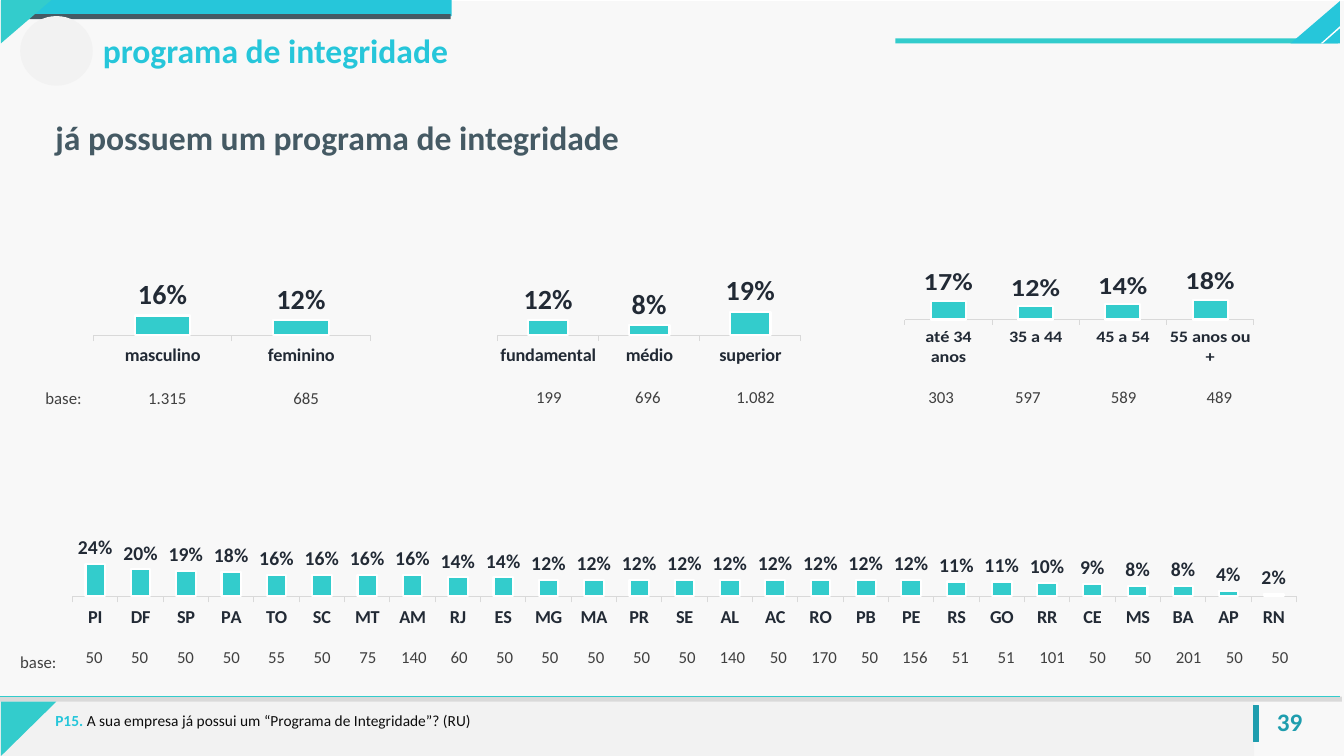
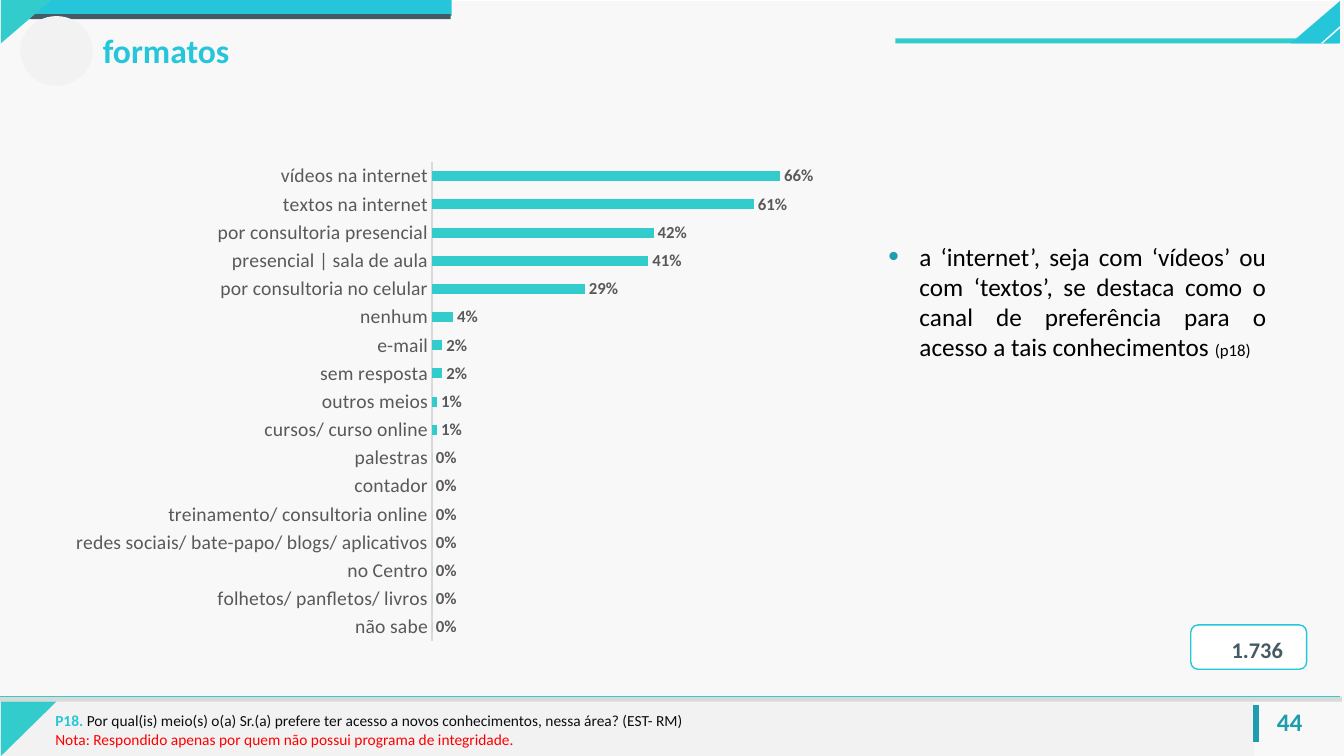
from pptx import Presentation
from pptx.chart.data import CategoryChartData
from pptx.dml.color import RGBColor
from pptx.enum.chart import XL_CHART_TYPE as ChartType, XL_LABEL_POSITION as LabelAt, XL_TICK_MARK as Tick
from pptx.enum.dml import MSO_PATTERN as Pattern
from pptx.enum.shapes import MSO_CONNECTOR as Connector, MSO_SHAPE as Shape
from pptx.enum.text import MSO_ANCHOR as Anchor, MSO_AUTO_SIZE as AutoSize, PP_ALIGN as Align
from pptx.oxml import parse_xml
from pptx.oxml.ns import nsdecls, qn
from pptx.util import Pt
from lxml import etree

EMU_PER_PX = 9144
FONT = "Calibri"
NO_GRID_STYLE = "{2D5ABB26-0587-4C30-8999-92F81FD0307C}"

CYAN = RGBColor(0x26, 0xC6, 0xDA)
TURQUOISE = RGBColor(0x33, 0xCC, 0xCC)
TEAL = RGBColor(0x1E, 0x9D, 0xAE)
SLATE = RGBColor(0x45, 0x5A, 0x64)
NAVY = RGBColor(0x22, 0x2A, 0x35)
INK = RGBColor(0x0D, 0x0D, 0x0D)
BLACK = RGBColor(0, 0, 0)
GRAPHITE = RGBColor(0x40, 0x40, 0x40)
GREY = RGBColor(0x59, 0x59, 0x59)
SILVER = RGBColor(0xD9, 0xD9, 0xD9)
PALE = RGBColor(0xF2, 0xF2, 0xF2)
PAPER = RGBColor(0xF8, 0xF8, 0xF8)
WHITE = RGBColor(0xFF, 0xFF, 0xFF)
RED = RGBColor(0xFF, 0, 0)


def px(length):
    return length * EMU_PER_PX


def box(*lengths):
    return [px(length) for length in lengths]


def style(size, color, bold=False):
    return {"size": Pt(size), "bold": bold, "name": FONT, "color": color}


HEADING = style(24, CYAN, True)
SUBHEADING = style(24, SLATE, True)
PAGE_NUMBER = style(18, TEAL, True)
QUESTION_CODE = style(11, CYAN, True)
QUESTION = style(11, INK)
NOTE = style(11, RED)
BASE = style(12, GRAPHITE)
BADGE = style(16, SLATE, True)


def apply(target, values):
    for name, value in values.items():
        if name == "color":
            target.color.rgb = value
        else:
            setattr(target, name, value)


def write(frame, paragraphs, **layout):
    for index, runs in enumerate(paragraphs):
        paragraph = frame.add_paragraph() if index else frame.paragraphs[0]
        apply(paragraph, layout)
        for text, run_style in runs:
            run = paragraph.add_run()
            run.text = text
            apply(run.font, run_style)


def paint(shape, fill, line=None, width=1):
    shape.shadow.inherit = False
    shape.fill.solid()
    shape.fill.fore_color.rgb = fill
    if line is None:
        shape.line.fill.background()
    else:
        apply(shape.line, {"color": line, "width": Pt(width)})
    return shape


def add_block(slide, kind, place, fill, line=None, width=1):
    return paint(slide.shapes.add_shape(kind, *box(*place)), fill, line, width)


def add_outline(slide, points, fill):
    builder = slide.shapes.build_freeform(*points[0], scale=EMU_PER_PX)
    builder.add_line_segments(points[1:], close=True)
    paint(builder.convert_to_shape(), fill)


def add_text(slide, place, paragraphs, wrap=True, **layout):
    frame = slide.shapes.add_textbox(*box(*place)).text_frame
    frame.word_wrap = wrap
    write(frame, paragraphs, **layout)


def fill_placeholder(placeholder, place, paragraphs, **layout):
    apply(placeholder, dict(zip(("left", "top", "width", "height"), box(*place))))
    frame = placeholder.text_frame
    apply(frame, {"auto_size": AutoSize.NONE, "vertical_anchor": Anchor.TOP, "word_wrap": True})
    write(frame, paragraphs, **layout)
    return frame


def add_bullet(paragraph):
    properties = paragraph._p.get_or_add_pPr()
    properties.set("marL", str(px(31)))
    properties.set("indent", str(px(-31)))
    bullet_color = etree.SubElement(properties, qn("a:buClr"))
    etree.SubElement(bullet_color, qn("a:srgbClr"), val=str(TEAL))
    for tag, attributes in (("a:buSzPct", {"val": "120000"}),
                            ("a:buFont", {"typeface": "Arial"}),
                            ("a:buChar", {"char": "•"})):
        etree.SubElement(properties, qn(tag), attributes)


def draw_frame(slide):
    backdrop = add_block(slide, Shape.RECTANGLE, (0, 0, 1333, 750), PAPER)
    backdrop.fill.patterned()
    backdrop.fill.pattern = Pattern.DARK_HORIZONTAL
    backdrop.fill.fore_color.rgb = PAPER
    backdrop.fill.back_color.rgb = WHITE
    for place, fill in (((0, 696, 1244, 54), PALE),
                        ((9, 0, 439, 16), CYAN),
                        ((-1, 691, 1332, 5), SILVER),
                        ((23, 14, 424, 5), SLATE),
                        ((888, 38, 439, 5), TURQUOISE)):
        add_block(slide, Shape.RECTANGLE, place, fill)
    for points, fill in (([(1, 0), (51, 0), (1, 43)], TURQUOISE),
                         ([(1329, 1), (1280, 43), (1329, 43)], CYAN),
                         ([(1329, 28), (1329, 26), (1310, 43), (1312, 43)], WHITE),
                         ([(1, 696), (56, 696), (1, 750)], TURQUOISE)):
        add_outline(slide, points, fill)
    rule = slide.shapes.add_connector(Connector.STRAIGHT, *box(-4, 691, 1329, 691))
    apply(rule.line, {"color": TURQUOISE, "width": Pt(0.5)})
    etree.SubElement(rule.element.spPr, qn("a:effectLst"))
    add_block(slide, Shape.RECTANGLE, (1243, 700, 5, 36), TEAL, TEAL, 0.75)
    add_block(slide, Shape.OVAL, (20, 16, 72, 69), PALE)


def move_frame_to_master(slide, master):
    tree = master.placeholders[0].element.getparent()
    parts = [shape.element for shape in slide.shapes if not shape.is_placeholder]
    for index, part in enumerate(parts):
        part.xpath(".//p:cNvPr")[0].set("id", str(100 + index))
        tree.insert(2 + index, part)


def add_heading_and_footer(slide, heading, number, footer):
    fill_placeholder(slide.shapes.title, (92, 25, 583, 50), [[(heading, HEADING)]], alignment=Align.LEFT)
    add_text(slide, (1248, 696, 62, 40), [[(number, PAGE_NUMBER)]], wrap=False, alignment=Align.CENTER)
    add_text(slide, (45, 701, 1201, 49), footer)


def set_plot_area(chart, fractions):
    plot_area = chart.element.find(".//" + qn("c:plotArea"))
    for layout in plot_area.findall(qn("c:layout")):
        plot_area.remove(layout)
    sizes = "".join(f'<c:{tag} val="{value}"/>' for tag, value in zip("xywh", fractions))
    plot_area.insert(0, parse_xml(
        f'<c:layout {nsdecls("c")}><c:manualLayout><c:layoutTarget val="inner"/>'
        f'<c:xMode val="edge"/><c:yMode val="edge"/>{sizes}</c:manualLayout></c:layout>'))


def add_bars(slide, kind, place, percents, axis_style, label_style, top, gap):
    data = CategoryChartData(number_format="0%")
    data.categories = list(percents)
    data.add_series("Series 1", [percent / 100 for percent in percents.values()])
    chart = slide.shapes.add_chart(kind, *box(*place), data).chart
    apply(chart, {"has_legend": False, "has_title": False})
    apply(chart.font, {"size": Pt(10), "name": FONT})
    apply(chart.value_axis, {"visible": False, "has_major_gridlines": False,
                             "minimum_scale": 0, "maximum_scale": top})
    apply(chart.category_axis, {"major_tick_mark": Tick.OUTSIDE, "has_major_gridlines": False})
    apply(chart.category_axis.tick_labels.font, axis_style)
    apply(chart.category_axis.format.line, {"color": SILVER, "width": Pt(0.75)})
    plot = chart.plots[0]
    apply(plot, {"gap_width": gap, "vary_by_categories": False, "has_data_labels": True})
    apply(plot.data_labels, {"show_value": True, "number_format": "0%", "number_format_is_linked": False,
                             "position": LabelAt.OUTSIDE_END})
    apply(plot.data_labels.font, label_style)
    bars = plot.series[0].format
    bars.fill.solid()
    bars.fill.fore_color.rgb = TURQUOISE
    return chart


def add_columns(slide, place, percents, label_size=20, gap=150, plot_area=(0.036, 0.167, 0.928, 0.659)):
    chart = add_bars(slide, ChartType.COLUMN_CLUSTERED, place, percents, style(13, NAVY, True),
                     style(label_size, NAVY, True), 0.9, gap)
    apply(chart.plots[0].series[0].format.line, {"color": WHITE, "width": Pt(1.5)})
    set_plot_area(chart, plot_area)


def add_base_row(slide, left, top, widths, values, align=Align.CENTER, indents=None, tight=False):
    holder = slide.shapes.add_table(1, len(values), *box(left, top, sum(widths), 37))
    holder.element.find(".//" + qn("a:tableStyleId")).text = NO_GRID_STYLE
    table = holder.table
    apply(table, {"first_row": False, "horz_banding": False})
    for index, (width, value) in enumerate(zip(widths, values)):
        table.columns[index].width = px(width)
        cell = table.cell(0, index)
        cell.fill.background()
        is_label = value == "base:"
        if tight and not is_label:
            apply(cell, {"vertical_anchor": Anchor.MIDDLE, "margin_left": px(1), "margin_right": px(1),
                         "margin_top": px(1), "margin_bottom": 0})
        if indents and index in indents:
            cell.margin_left = px(indents[index])
        write(cell.text_frame, [[(value, BASE)]], alignment=Align.LEFT if is_label else align,
              line_spacing=1.0 if tight and not is_label else 1.5)


def share_width(total, count):
    edges = [round(total * index / count) for index in range(count + 1)]
    return [right - left for left, right in zip(edges, edges[1:])]


def fill_profile_slide(slide):
    add_heading_and_footer(slide, "programa de integridade", "39", [
        [("P15. ", QUESTION_CODE), ("A sua empresa já possui um “Programa de Integridade”? (RU)", QUESTION)]])
    add_text(slide, (45, 111, 1223, 50), [[("já possuem um programa de integridade", SUBHEADING)]])
    add_columns(slide, (82, 194, 296, 170), {"masculino": 16, "feminino": 12})
    add_columns(slide, (482, 194, 324, 170), {"fundamental": 12, "médio": 8, "superior": 19})
    add_columns(slide, (884, 194, 373, 170),
                {"até 34 anos": 17, "35 a 44": 12, "45 a 54": 14, "55 anos ou +": 18})
    add_base_row(slide, 35, 370, [82, 164, 64], ["base:", "1.315", "685"], Align.LEFT, {1: 30})
    add_base_row(slide, 482, 369, [107] * 3, ["199", "696", "1.082"], indents={0: 28})
    add_base_row(slide, 877, 369, [95] * 4, ["303", "597", "589", "489"], indents={0: 28})
    states = "PI DF SP PA TO SC MT AM RJ ES MG MA PR SE AL AC RO PB PE RS GO RR CE MS BA AP RN".split()
    percents = [24, 20, 19, 18] + [16] * 4 + [14] * 2 + [12] * 9 + [11, 11, 10, 9, 8, 8, 4, 2]
    add_columns(slide, (25, 448, 1308, 182), dict(zip(states, percents)), 14, 132,
                (0.036, 0.126, 0.928, 0.664))
    bases = ("50 50 50 50 55 50 75 140 60 50 50 50 50 50 140 50 170 50 156 "
             "51 51 101 50 50 201 50 50").split()
    add_base_row(slide, 10, 632, [61] + share_width(1221, len(bases)), ["base:"] + bases, tight=True)


def fill_formats_slide(slide):
    add_heading_and_footer(slide, "formatos", "44", [
        [("P18. ", QUESTION_CODE),
         ("Por qual(is) meio(s) o(a) Sr.(a) prefere ter acesso a novos conhecimentos, nessa área? (EST- RM)",
          QUESTION)],
        [("Nota: Respondido apenas por quem não possui programa de integridade.", NOTE)]])
    findings = fill_placeholder(slide.placeholders[1], (871, 234, 395, 131), [[
        ("a ‘internet’, seja com ‘vídeos’ ou com ‘textos’, se destaca como o canal de preferência "
         "para o acesso a tais conhecimentos ", style(18, BLACK)),
        ("(p18)", style(12, BLACK))]], alignment=Align.JUSTIFY, space_before=Pt(0))
    add_bullet(findings.paragraphs[0])
    channels = {
        "vídeos na internet": 66, "textos na internet": 61, "por consultoria presencial": 42,
        "presencial | sala de aula": 41, "por consultoria no celular": 29, "nenhum": 4, "e-mail": 2,
        "sem resposta": 2, "outros meios": 1, "cursos/ curso online": 1, "palestras": 0, "contador": 0,
        "treinamento/ consultoria online": 0, "redes sociais/ bate-papo/ blogs/ aplicativos": 0,
        "no Centro": 0, "folhetos/ panfletos/ livros": 0, "não sabe": 0}
    chart = add_bars(slide, ChartType.BAR_CLUSTERED, (53, 151, 757, 495), channels, style(14, GREY),
                     style(12, GREY, True), 0.7, 182)
    set_plot_area(chart, (0.496, 0.02, 0.484, 0.96))
    apply(chart.category_axis, {"reverse_order": True, "major_tick_mark": Tick.NONE})
    badge = add_block(slide, Shape.ROUNDED_RECTANGLE, (1181, 620, 115, 44), WHITE, CYAN)
    apply(badge.text_frame, {"margin_left": px(17), "margin_right": 0, "margin_top": px(4),
                             "margin_bottom": 0, "vertical_anchor": Anchor.MIDDLE})
    write(badge.text_frame, [[("1.736", BADGE)]], alignment=Align.CENTER)


def main():
    deck = Presentation()
    apply(deck, {"slide_width": px(1333), "slide_height": px(750)})
    profile = deck.slides.add_slide(deck.slide_layouts.get_by_name("Title Only"))
    draw_frame(profile)
    move_frame_to_master(profile, deck.slide_master)
    fill_profile_slide(profile)
    fill_formats_slide(deck.slides.add_slide(deck.slide_layouts.get_by_name("Title and Content")))
    deck.save("out.pptx")


if __name__ == "__main__":
    main()
